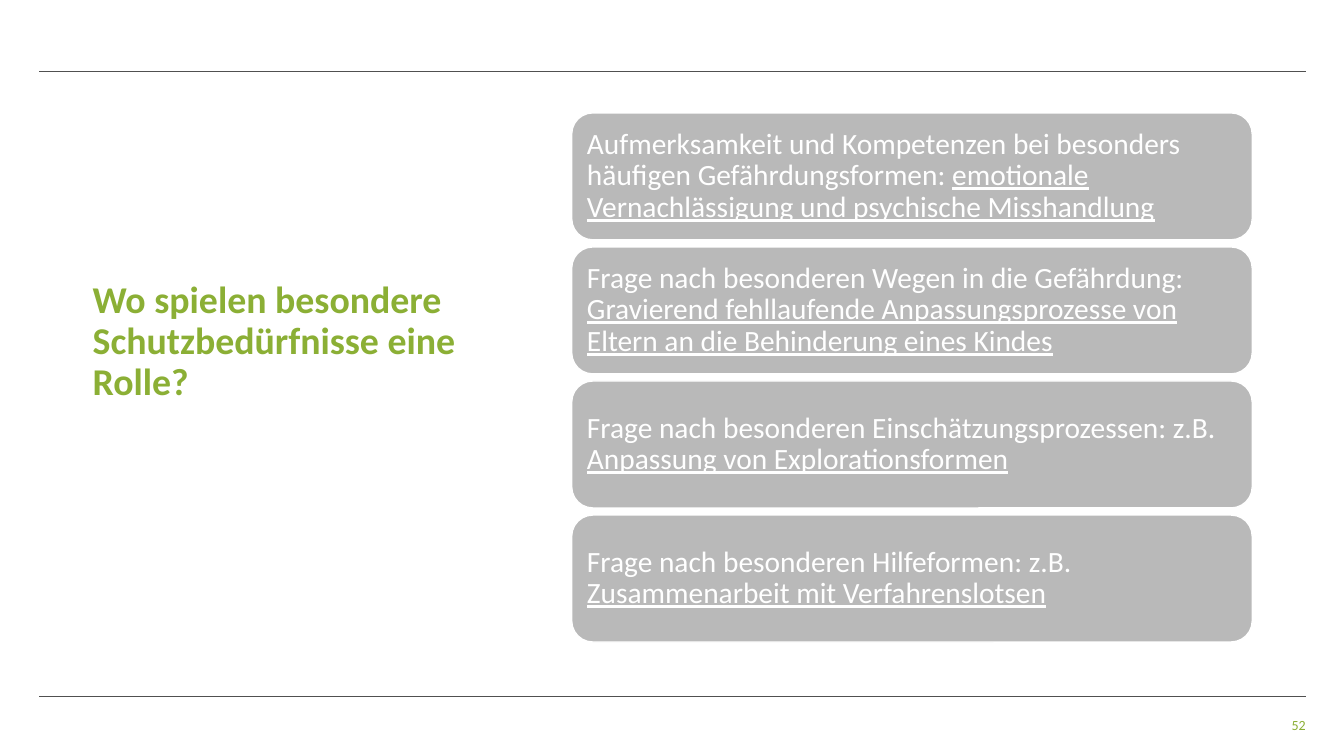
"""Builds the slide on special protection needs."""
from dataclasses import dataclass

from lxml.etree import SubElement
from pptx import Presentation
from pptx.dml.color import RGBColor
from pptx.enum.shapes import MSO_CONNECTOR as Connector, MSO_SHAPE as Shape
from pptx.enum.text import MSO_ANCHOR as Anchor, PP_ALIGN as Align
from pptx.oxml.ns import qn
from pptx.slide import Slide
from pptx.text.text import TextFrame
from pptx.util import Inches, Pt

COLORS = {"green": "8BAF35", "card": "B9B9B9", "white": "FFFFFF", "rule": "505050"}
FONT = "Calibri"
CARD_LEFT, CARD_TOP, CARD_WIDTH, CARD_HEIGHT, CARD_PITCH = 5.67, 1.12, 6.75, 1.26, 1.33


@dataclass(frozen=True)
class Span:
    text: str
    size: float
    color: str
    bold: bool = False
    underline: bool = False


@dataclass(frozen=True)
class Card:
    lead: str
    emphasis: str


CARDS = [
    Card("Aufmerksamkeit und Kompetenzen bei besonders häufigen Gefährdungsformen: ",
         "emotionale Vernachlässigung und psychische Misshandlung"),
    Card("Frage nach besonderen Wegen in die Gefährdung: ",
         "Gravierend fehllaufende Anpassungsprozesse von Eltern an die Behinderung eines Kindes"),
    Card("Frage nach besonderen Einschätzungsprozessen: z.B. ",
         "Anpassung von Explorationsformen"),
    Card("Frage nach besonderen Hilfeformen: z.B. ",
         "Zusammenarbeit mit Verfahrenslotsen"),
]


def color(name: str) -> RGBColor:
    return RGBColor.from_string(COLORS[name])


def fill_text(frame: TextFrame, spans: list[Span], anchor: Anchor,
              align: Align = Align.LEFT, inset: float = 0) -> None:
    frame.word_wrap = True
    frame.vertical_anchor = anchor
    frame.margin_left = frame.margin_right = Inches(inset)
    frame.margin_top = frame.margin_bottom = Inches(inset)
    para = frame.paragraphs[0]
    para.alignment = align
    para.line_spacing = 0.9
    for span in spans:
        run = para.add_run()
        run.text = span.text
        run.font.name = FONT
        run.font.size = Pt(span.size)
        run.font.bold = span.bold
        run.font.underline = span.underline
        run.font.color.rgb = color(span.color)


def add_rule(page: Slide, y: float) -> None:
    rule = page.shapes.add_connector(
        Connector.STRAIGHT, Inches(0.39), Inches(y), Inches(12.95), Inches(y))
    rule.line.color.rgb = color("rule")
    rule.line.width = Pt(0.5)
    SubElement(rule._element.spPr, qn("a:effectLst"))


def add_card(page: Slide, card: Card, top: float) -> None:
    box = page.shapes.add_shape(
        Shape.ROUNDED_RECTANGLE, Inches(CARD_LEFT), Inches(top),
        Inches(CARD_WIDTH), Inches(CARD_HEIGHT))
    box.shadow.inherit = False
    box.fill.solid()
    box.fill.fore_color.rgb = color("card")
    box.line.color.rgb = color("white")
    box.line.width = Pt(1)
    spans = [Span(card.lead, 21, "white"),
             Span(card.emphasis, 21, "white", underline=True)]
    fill_text(box.text_frame, spans, Anchor.MIDDLE, inset=0.09)


def main() -> None:
    deck = Presentation()
    deck.slide_width, deck.slide_height = Inches(13.33), Inches(7.5)
    page = deck.slides.add_slide(deck.slide_layouts[6])

    for y in (0.71, 6.91):
        add_rule(page, y)

    title = page.shapes.add_textbox(Inches(0.92), Inches(2.25), Inches(4.3), Inches(1.75))
    heading = Span("Wo spielen besondere Schutzbedürfnisse eine Rolle?", 27, "green", bold=True)
    fill_text(title.text_frame, [heading], Anchor.BOTTOM)

    number = page.shapes.add_textbox(Inches(11.97), Inches(7.13), Inches(0.98), Inches(0.15))
    fill_text(number.text_frame, [Span("52", 10, "green")], Anchor.BOTTOM, Align.RIGHT)

    for index, card in enumerate(CARDS):
        add_card(page, card, CARD_TOP + index * CARD_PITCH)

    deck.save("out.pptx")


if __name__ == "__main__":
    main()
